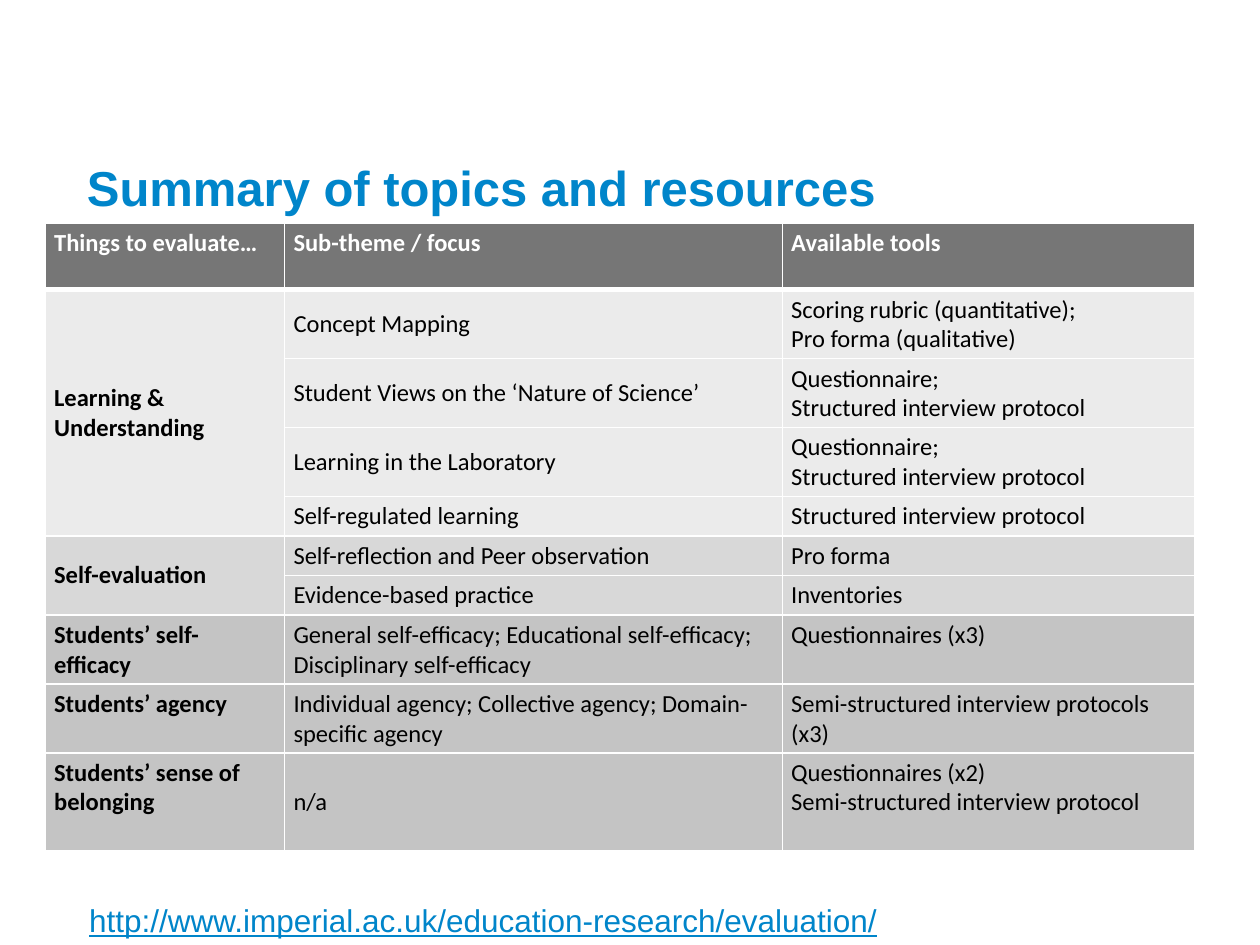
from lxml.etree import SubElement as Sub
from pptx import Presentation
from pptx.dml.color import RGBColor
from pptx.enum.text import MSO_ANCHOR as Anchor
from pptx.oxml.ns import qn
from pptx.util import Inches, Pt

WHITE = RGBColor(0xFF, 0xFF, 0xFF)
BLACK = RGBColor(0, 0, 0)
BLUE = RGBColor(0x00, 0x85, 0xCA)
HEAD = RGBColor(0x76, 0x76, 0x76)
LIGHT = RGBColor(0xEB, 0xEB, 0xEB)
MID = RGBColor(0xD8, 0xD8, 0xD8)
DARK = RGBColor(0xC4, 0xC4, 0xC4)

WIDTHS = [1.9, 3.95, 3.27]
ROWS = [  # height, fill, texts
    (0.53, HEAD, "Things to evaluate…", "Sub-theme / focus", "Available tools"),
    (0.53, LIGHT, "Learning & Understanding", "Concept Mapping",
     "Scoring rubric (quantitative);\nPro forma (qualitative)"),
    (0.53, LIGHT, "", "Student Views on the ‘Nature of Science’",
     "Questionnaire;\nStructured interview protocol"),
    (0.53, LIGHT, "", "Learning in the Laboratory",
     "Questionnaire;\nStructured interview protocol"),
    (0.3, LIGHT, "", "Self-regulated learning", "Structured interview protocol"),
    (0.3, MID, "Self-evaluation", "Self-reflection and Peer observation", "Pro forma"),
    (0.3, MID, "", "Evidence-based practice", "Inventories"),
    (0.53, DARK, "Students’ self-efficacy",
     "General self-efficacy; Educational self-efficacy; Disciplinary self-efficacy",
     "Questionnaires (x3)"),
    (0.53, DARK, "Students’ agency",
     "Individual agency; Collective agency; Domain-specific agency",
     "Semi-structured interview protocols (x3)"),
    (0.78, DARK, "Students’ sense of belonging", "n/a",
     "Questionnaires (x2)\nSemi-structured interview protocol"),
]
SPANS = [(1, 4), (5, 6)]  # first and last row of each merged theme


def style(frame, name, size, color, bold=False, under=False):
    for para in frame.paragraphs:
        for run in para.runs:
            font = run.font
            font.name, font.size, font.bold = name, Pt(size), bold
            font.underline = under
            font.color.rgb = color


def edge(cell, side, width):
    """Draw a white border on one side: L, R, T or B."""
    line = Sub(cell._tc.get_or_add_tcPr(), qn(f"a:ln{side}"), w=str(Pt(width)))
    Sub(Sub(line, qn("a:solidFill")), qn("a:srgbClr"), val=str(WHITE))


prs = Presentation()
prs.slide_width, prs.slide_height = Inches(10), Inches(7.5)
slide = prs.slides.add_slide(prs.slide_layouts[6])

title = slide.shapes.add_textbox(
    Inches(0.69), Inches(0.99), Inches(8.62), Inches(0.94)).text_frame
title.word_wrap = True
title.vertical_anchor = Anchor.MIDDLE
title.margin_left = title.margin_right = title.margin_bottom = 0
title.text = "Summary of topics and resources"
style(title, "Arial", 28, BLUE, bold=True)

table = slide.shapes.add_table(
    len(ROWS), len(WIDTHS), Inches(0.36), Inches(1.77),
    Inches(sum(WIDTHS)), Inches(sum(row[0] for row in ROWS))).table
for col, width in zip(table.columns, WIDTHS):
    col.width = Inches(width)

for r, (height, fill, *texts) in enumerate(ROWS):
    table.rows[r].height = Inches(height)
    for c, text in enumerate(texts):
        cell = table.cell(r, c)
        cell.margin_left = cell.margin_right = Inches(0.07)
        cell.margin_top = cell.margin_bottom = Inches(0.04)
        middle = c == 1 and r > 0 or c == 0 and 0 < r < 7
        cell.vertical_anchor = Anchor.MIDDLE if middle else Anchor.TOP
        for side in "LRTB":
            thick = (r, side) in [(0, "B"), (1, "T")]
            edge(cell, side, 3 if thick else 1)
        cell.fill.solid()
        cell.fill.fore_color.rgb = fill
        cell.text_frame.text = text
        style(cell.text_frame, "Calibri", 14, BLACK if r else WHITE,
              bold=r == 0 or c == 0)

for first, last in SPANS:
    table.cell(first, 0).merge(table.cell(last, 0))

link = slide.shapes.add_textbox(
    Inches(0.61), Inches(7.1), Inches(7.66), Inches(0.4)).text_frame
link.word_wrap = True
link.text = "http://www.imperial.ac.uk/education-research/evaluation/"
style(link, "Arial", 18, BLUE, under=True)

prs.save("out.pptx")
